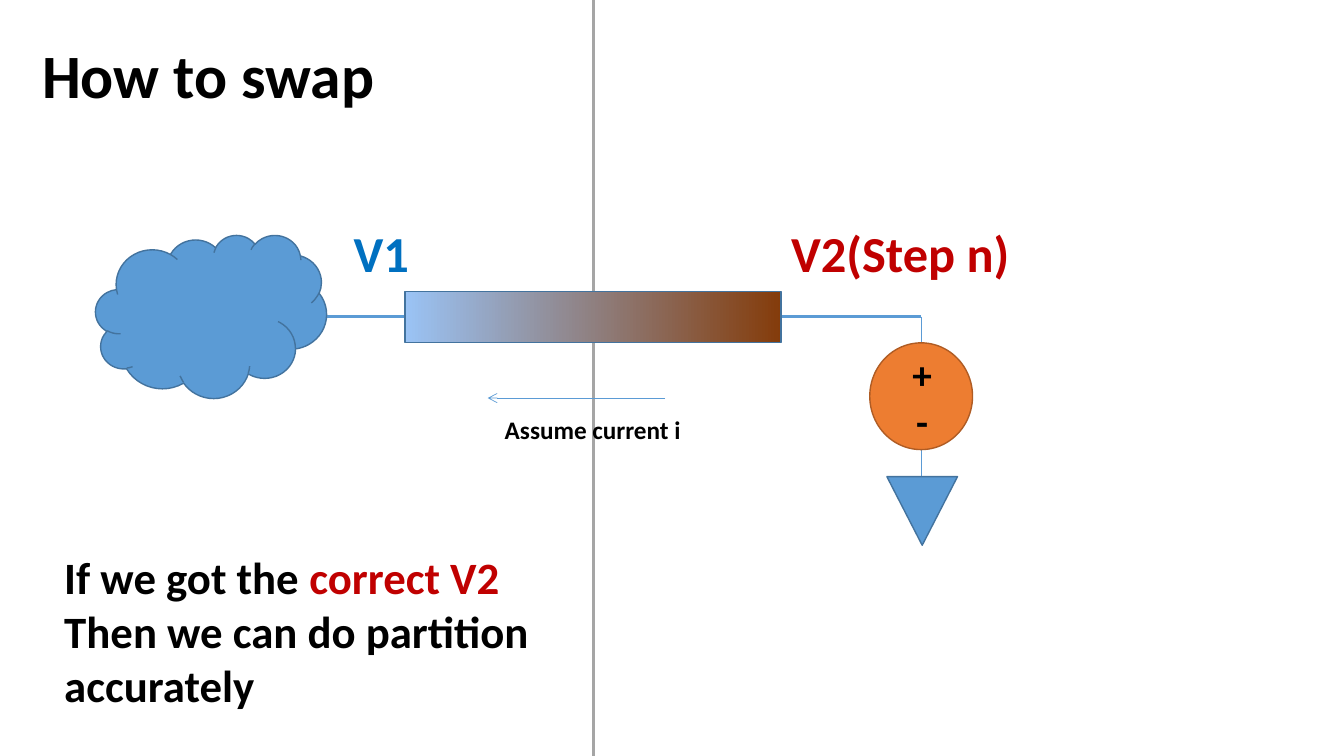
from lxml.etree import SubElement
from pptx import Presentation
from pptx.dml.color import RGBColor
from pptx.enum.shapes import MSO_CONNECTOR, MSO_SHAPE
from pptx.enum.text import MSO_AUTO_SIZE, PP_ALIGN
from pptx.oxml.ns import qn
from pptx.util import Cm, Pt

THEME = dict(
    font="Calibri",
    black="000000", red="C00000", v1="0070C0",
    blue="5B9BD5", edge="43739E", divider="A5A5A5",
    orange="ED7D31", orange_edge="AF5C24",
    wire_start="9AC3F5", wire_end="843C0B",
    title=44, label=36, body=32, sign=28, note=18,
    thin=0.5, outline=1, thick=2.25,
)

# Content: lengths in cm
SLIDE_W, SLIDE_H = 33.87, 19.05
WIRE_Y, SOURCE_X, GROUND_Y = 7.98, 23.22, 12.01
DIVIDER_X, CURRENT_Y = 14.96, 10.03

# start, end, colour, width, arrowhead at the end
LINES = [
    ((SOURCE_X, WIRE_Y), (SOURCE_X, GROUND_Y), "blue", "thin", False),
    ((DIVIDER_X, 0), (DIVIDER_X, SLIDE_H), "divider", "thick", False),
    ((6.25, WIRE_Y), (SOURCE_X, WIRE_Y), "blue", "thick", False),
    ((16.76, CURRENT_Y), (12.29, CURRENT_Y), "blue", "thin", True),
]

# preset, box, fill (two names make a gradient), outline, rotation
SHAPES = [
    (MSO_SHAPE.RECTANGLE, (10.21, 7.34, 9.47, 1.3), ("wire_start", "wire_end"), "edge", 0),
    (MSO_SHAPE.CLOUD, (2.41, 5.92, 5.82, 4.11), ("blue",), "edge", 0),
    (MSO_SHAPE.OVAL, (21.92, 8.64, 2.59, 2.69), ("orange",), "orange_edge", 0),
    (MSO_SHAPE.ISOSCELES_TRIANGLE, (22.35, GROUND_Y, 1.78, 1.73), ("blue",), "edge", 180),
]

# box, paragraphs of (text, colour) runs, size, alignment
TEXTS = [
    ((0.81, 0.81, 8.97, 2.13), [[("How to swap", "black")]], "title", PP_ALIGN.LEFT),
    ((8.66, 5.46, 1.93, 1.8), [[("V1", "v1")]], "label", PP_ALIGN.LEFT),
    ((19.69, 5.46, 6.07, 1.8), [[("V2(Step n)", "red")]], "label", PP_ALIGN.LEFT),
    ((12.47, 10.31, 4.98, 1.02), [[("Assume current i", "black")]], "note", PP_ALIGN.LEFT),
    ((22.73, 8.71, 1.02, 2.64), [[("+", "black")], [("-", "black")]], "sign", PP_ALIGN.CENTER),
    ((1.37, 13.74, 12.34, 4.37), [
        [("If we got the ", "black"), ("correct V2", "red")],
        [("Then we can do partition", "black")],
        [("accurately", "black")],
    ], "body", PP_ALIGN.LEFT),
]


def color(name):
    return RGBColor.from_string(THEME[name])


def cms(values):
    return [Cm(v) for v in values]


def add_line(s, start, end, line_color, width, arrow):
    line = s.shapes.add_connector(MSO_CONNECTOR.STRAIGHT, *cms(start + end))
    line.line.color.rgb = color(line_color)
    line.line.width = Pt(THEME[width])
    if arrow:
        SubElement(line.line._get_or_add_ln(), qn("a:tailEnd"), type="arrow")
    SubElement(line._element.spPr, qn("a:effectLst"))


def add_figure(s, preset, box, fills, outline, rotation):
    sp = s.shapes.add_shape(preset, *cms(box))
    sp.shadow.inherit = False
    sp.rotation = rotation
    if len(fills) > 1:
        sp.fill.gradient()
        sp.fill.gradient_angle = 0
        for stop, name, position in zip(sp.fill.gradient_stops, fills, (0, 1)):
            stop.color.rgb = color(name)
            stop.position = position
    else:
        sp.fill.solid()
        sp.fill.fore_color.rgb = color(fills[0])
    sp.line.color.rgb = color(outline)
    sp.line.width = Pt(THEME["outline"])


def add_run(p, text, *, size, fill, bold=True):
    r = p.add_run()
    r.text = text
    r.font.name = THEME["font"]
    r.font.size = Pt(THEME[size])
    r.font.bold = bold
    r.font.color.rgb = color(fill)


def add_text(s, box, paragraphs, size, align):
    tf = s.shapes.add_textbox(*cms(box)).text_frame
    tf.word_wrap = False
    tf.auto_size = MSO_AUTO_SIZE.SHAPE_TO_FIT_TEXT
    for i, runs in enumerate(paragraphs):
        p = tf.add_paragraph() if i else tf.paragraphs[0]
        p.alignment = align
        for text, fill in runs:
            add_run(p, text, size=size, fill=fill)


def main():
    prs = Presentation()
    prs.slide_width, prs.slide_height = Cm(SLIDE_W), Cm(SLIDE_H)
    s = prs.slides.add_slide(prs.slide_layouts[6])

    # Wires, divider and current arrow
    for line in LINES:
        add_line(s, *line)
    # Circuit parts
    for figure in SHAPES:
        add_figure(s, *figure)
    # Title, labels and conclusion
    for text in TEXTS:
        add_text(s, *text)

    prs.save("out.pptx")


if __name__ == "__main__":
    main()
